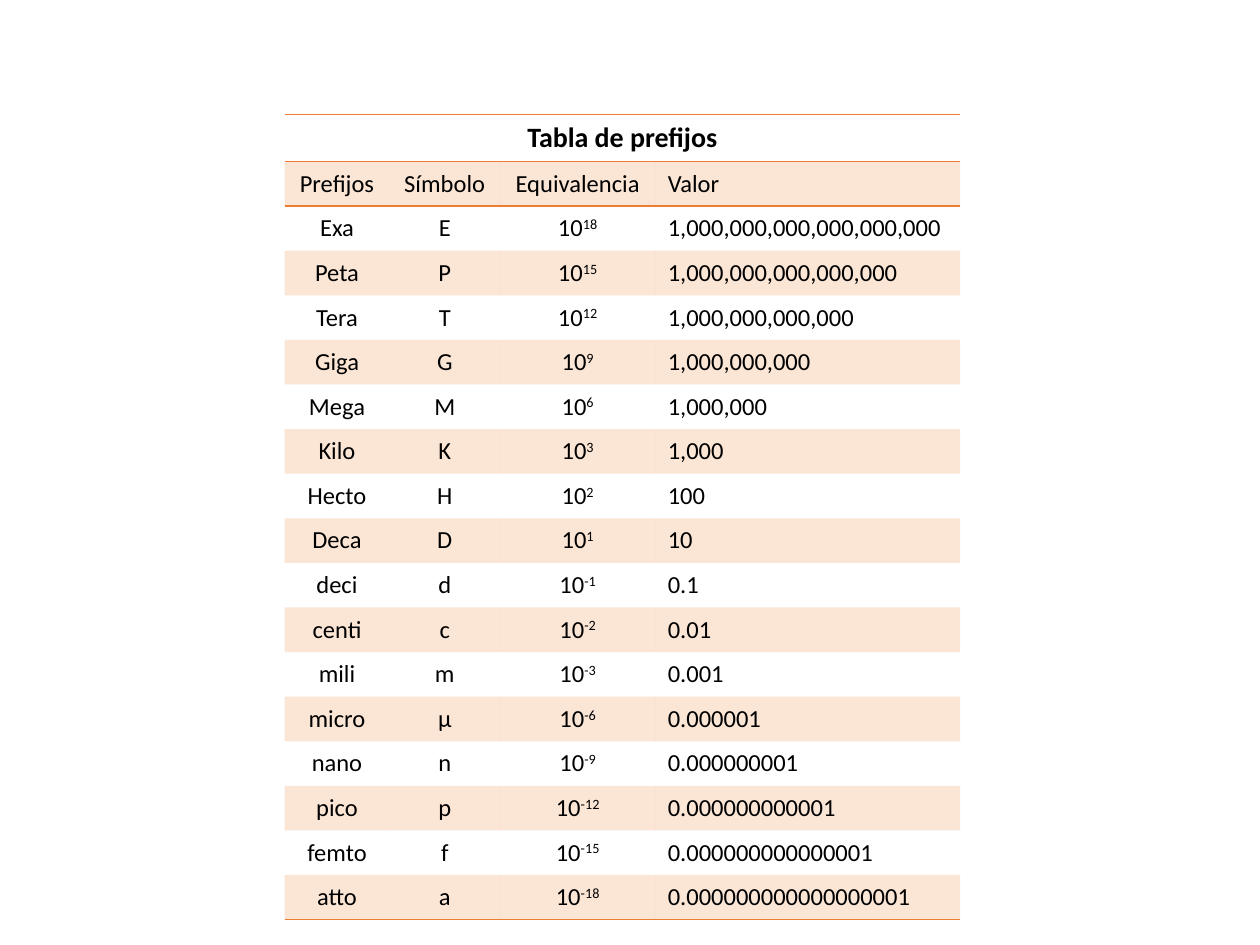
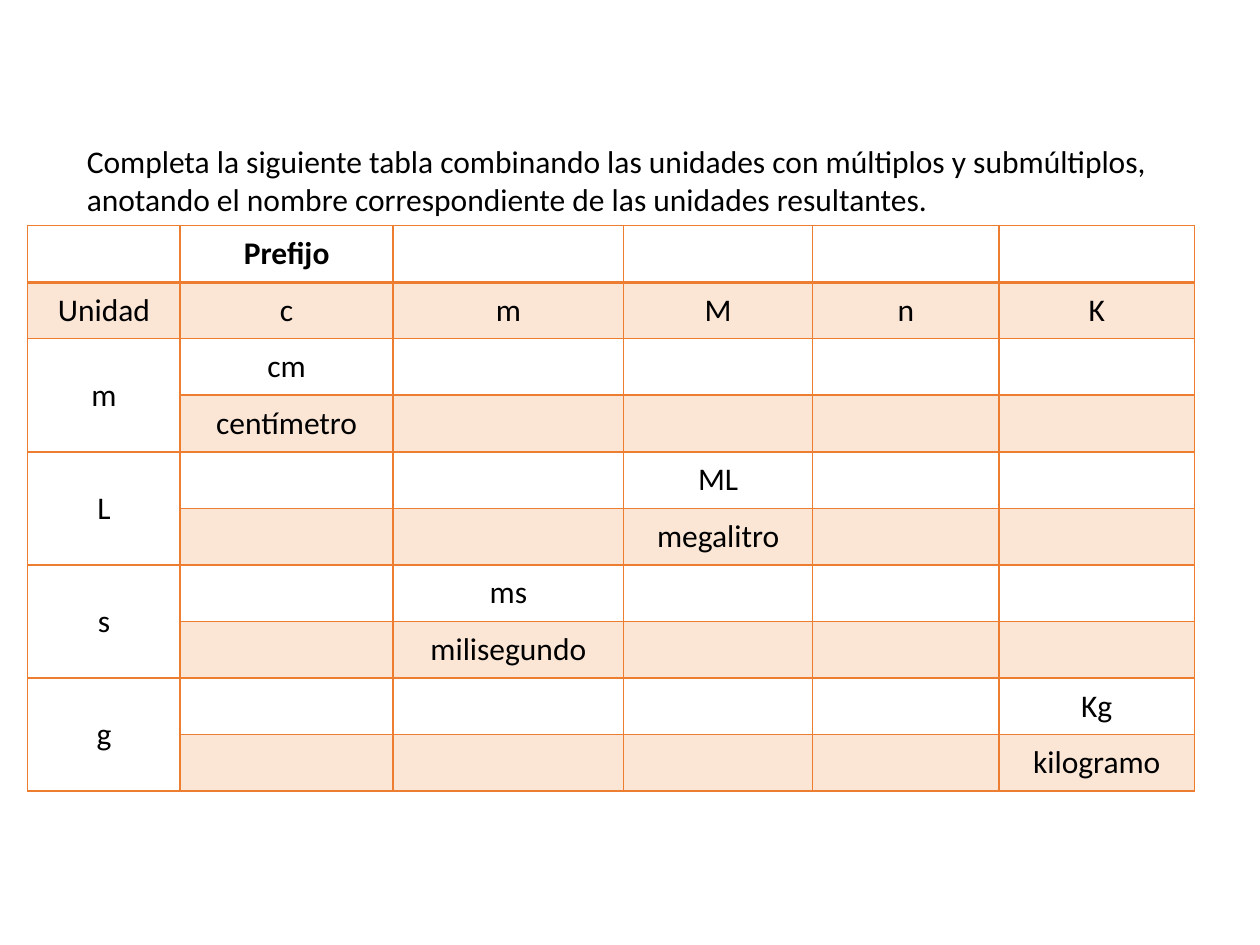
from lxml import etree
from pptx import Presentation
from pptx.dml.color import RGBColor
from pptx.enum.text import MSO_ANCHOR, PP_ALIGN
from pptx.oxml.ns import qn
from pptx.util import Inches, Pt

MIDDLE = MSO_ANCHOR.MIDDLE
CENTER, LEFT = PP_ALIGN.CENTER, PP_ALIGN.LEFT

COLORS = {"accent": "ED7D31", "text": "000000"}
FONT = "Calibri"
BAND_ALPHA = 20
PLAIN_STYLE = "{2D5ABB26-0587-4C30-8999-92F81FD0307C}"

PREFIX_HEADINGS = ["Prefijos", "Símbolo", "Equivalencia", "Valor"]
PREFIXES = [
    ("Exa", "E", 18), ("Peta", "P", 15), ("Tera", "T", 12), ("Giga", "G", 9),
    ("Mega", "M", 6), ("Kilo", "K", 3), ("Hecto", "H", 2), ("Deca", "D", 1),
    ("deci", "d", -1), ("centi", "c", -2), ("mili", "m", -3), ("micro", "µ", -6),
    ("nano", "n", -9), ("pico", "p", -12), ("femto", "f", -15), ("atto", "a", -18),
]
UNIT_HEADINGS = ["Unidad", "c", "m", "M", "n", "K"]
UNITS = [
    ("m", 1, "cm", "centímetro"),
    ("L", 3, "ML", "megalitro"),
    ("s", 2, "ms", "milisegundo"),
    ("g", 5, "Kg", "kilogramo"),
]
INSTRUCTION = (
    "Completa la siguiente tabla combinando las unidades con múltiplos y submúltiplos, "
    "anotando el nombre correspondiente de las unidades resultantes."
)


def add_run(paragraph, text, size, bold=False, superscript=False):
    run = paragraph.add_run()
    run.text = text
    for name, value in {"name": FONT, "size": Pt(size), "bold": bold}.items():
        setattr(run.font, name, value)
    run.font.color.rgb = RGBColor.from_string(COLORS["text"])
    if superscript:
        run.font._element.set("baseline", "30000")


def write_cell(cell, text, size, bold=False, align=CENTER, exponent=""):
    cell.vertical_anchor = MIDDLE
    paragraph = cell.text_frame.paragraphs[0]
    paragraph.alignment = align
    add_run(paragraph, text, size, bold)
    if exponent:
        add_run(paragraph, exponent, size, superscript=True)


def style_cell(cell, borders, banded):
    properties = cell._tc.get_or_add_tcPr()
    for side in "LRTB":
        if side in borders:
            line = etree.SubElement(properties, qn(f"a:ln{side}"), w=str(Pt(borders[side])))
            fill = etree.SubElement(line, qn("a:solidFill"))
            etree.SubElement(fill, qn("a:srgbClr"), val=COLORS["accent"])
    if banded:
        cell.fill.solid()
        cell.fill.fore_color.rgb = RGBColor.from_string(COLORS["accent"])
        color = properties.find(qn("a:solidFill")).find(qn("a:srgbClr"))
        etree.SubElement(color, qn("a:alpha"), val=str(BAND_ALPHA * 1000))
    else:
        cell.fill.background()


def add_plain_table(slide, box, widths, row_count):
    left, top, width, height = map(Inches, box)
    frame = slide.shapes.add_table(row_count, len(widths), left, top, width, height)
    table = frame.table
    table._tbl.tblPr.find(qn("a:tableStyleId")).text = PLAIN_STYLE
    table.first_row = table.horz_banding = False
    for column, column_width in zip(table.columns, widths):
        column.width = Inches(column_width)
    for row in table.rows:
        row.height = Inches(box[3] / row_count)
    return table


def add_prefix_table(slide, box):
    last = len(PREFIXES) + 1
    table = add_plain_table(slide, box, [0.83, 0.88, 1.23, 2.42], last + 1)
    title_height = 0.37
    for row in table.rows:
        row.height = Inches((box[3] - title_height) / last)
    table.rows[0].height = Inches(title_height)
    borders = {0: {"T": 1, "B": 1}, 1: {"T": 1}, last: {"B": 1}}
    for row in range(last + 1):
        for column in range(4):
            style_cell(table.cell(row, column), borders.get(row, {}), row % 2 == 1)
    title = table.cell(0, 0)
    title.merge(table.cell(0, 3))
    write_cell(title, "Tabla de prefijos", 16, bold=True)
    aligns = [CENTER, CENTER, CENTER, LEFT]
    for column, heading in enumerate(PREFIX_HEADINGS):
        write_cell(table.cell(1, column), heading, 14, align=aligns[column])
    for row, (prefix, symbol, power) in enumerate(PREFIXES, 2):
        value = f"{10 ** power:,}" if power > 0 else f"{10 ** power:.{-power}f}"
        for column, text in enumerate([prefix, symbol, "10", value]):
            exponent = str(power) if column == 2 else ""
            write_cell(table.cell(row, column), text, 14, align=aligns[column], exponent=exponent)


def add_unit_table(slide, box):
    row_count = 2 + 2 * len(UNITS)
    table = add_plain_table(slide, box, [1.21, 1.69, 1.83, 1.5, 1.48, 1.55], row_count)
    header_borders = {0: {"B": 2}, 1: {"T": 2}}
    for row in range(row_count):
        borders = dict.fromkeys("LRTB", 1) | header_borders.get(row, {})
        for column in range(len(UNIT_HEADINGS)):
            banded = row == 1 or (row % 2 == 1 and column > 0)
            style_cell(table.cell(row, column), borders, banded)
    write_cell(table.cell(0, 1), "Prefijo", 18, bold=True)
    for column, heading in enumerate(UNIT_HEADINGS):
        write_cell(table.cell(1, column), heading, 18)
    for index, (unit, column, symbol, name) in enumerate(UNITS):
        row = 2 + 2 * index
        unit_cell = table.cell(row, 0)
        unit_cell.merge(table.cell(row + 1, 0))
        write_cell(unit_cell, unit, 18)
        write_cell(table.cell(row, column), symbol, 18)
        write_cell(table.cell(row + 1, column), name, 18)


def add_instruction(slide, box):
    frame = slide.shapes.add_textbox(*map(Inches, box)).text_frame
    frame.word_wrap = True
    add_run(frame.paragraphs[0], INSTRUCTION, 18)


def main():
    deck = Presentation()
    deck.slide_width, deck.slide_height = Inches(10), Inches(7.5)
    blank = deck.slide_layouts[6]
    add_prefix_table(deck.slides.add_slide(blank), (2.26, 0.91, 5.36, 6.39))
    exercise = deck.slides.add_slide(blank)
    add_unit_table(exercise, (0.22, 1.79, 9.26, 4.49))
    add_instruction(exercise, (0.59, 1.08, 9.09, 0.71))
    deck.save("out.pptx")


if __name__ == "__main__":
    main()
